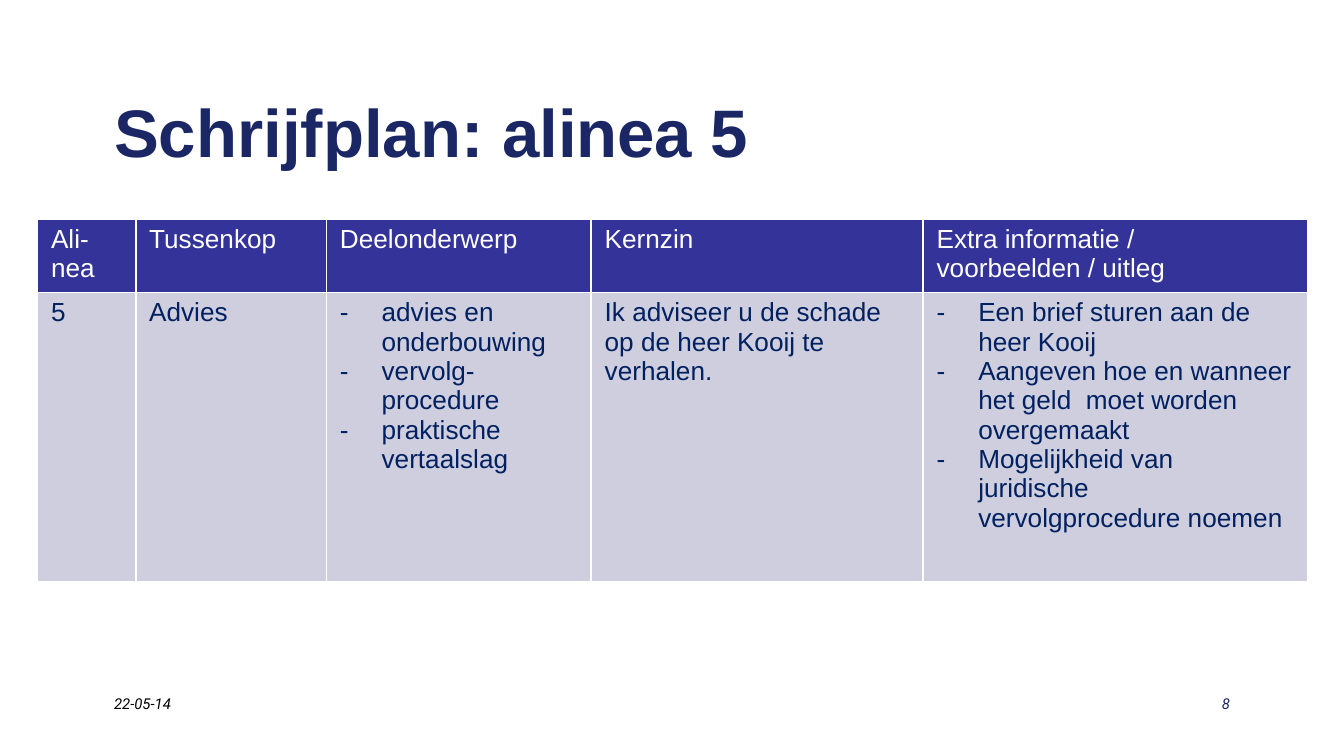
"""Build the writing-plan slide with its table for paragraph 5."""
from pptx import Presentation
from pptx.dml.color import RGBColor as Rgb
from pptx.enum.text import MSO_ANCHOR as Anchor, PP_ALIGN as Align
from pptx.oxml.ns import qn
from pptx.util import Inches, Pt
from lxml.etree import SubElement

COLORS = {
    "title": "1B2764",
    "date": "000000",
    "header": "333399",
    "body": "CECEDE",
    "cell_text": "002060",
    "white": "FFFFFF",
}
COLUMN_WIDTHS = [0.73, 1.42, 1.97, 2.47, 2.86]
ROW_HEIGHTS = [0.53, 2.15]
HEADINGS = ["Ali-nea", "Tussenkop", "Deelonderwerp", "Kernzin",
            "Extra informatie / voorbeelden / uitleg"]
PLAN = [
    "5",
    "Advies",
    ["advies en onderbouwing", "vervolg-procedure", "praktische vertaalslag"],
    "Ik adviseer u de schade op de heer Kooij te verhalen.",
    ["Een brief sturen aan de heer Kooij",
     "Aangeven hoe en wanneer het geld  moet worden overgemaakt",
     "Mogelijkheid van  juridische vervolgprocedure noemen"],
]


def write(para, text, size=14, font="Arial", color="cell_text", bold=False,
          italic=False, align=Align.LEFT, bullet=None):
    para.alignment = align
    if bullet:
        properties = para._p.get_or_add_pPr()
        properties.set("marL", str(Inches(0.31)))
        properties.set("indent", str(-Inches(0.31)))
        SubElement(properties, qn("a:buFont"), typeface=font)
        SubElement(properties, qn("a:buChar"), char=bullet)
    span = para.add_run()
    span.text = text
    span.font.size = Pt(size)
    span.font.name = font
    span.font.bold = bold
    span.font.italic = italic
    span.font.color.rgb = Rgb.from_string(COLORS[color])


class SlideWriter:
    """Hold the current slide and add its styled elements."""

    def __init__(self, deck):
        self.page = deck.slides.add_slide(deck.slide_layouts[5])

    def title(self, text, left, top, width, height):
        box = self.page.shapes.title
        box.left, box.top = Inches(left), Inches(top)
        box.width, box.height = Inches(width), Inches(height)
        box.text_frame.vertical_anchor = Anchor.MIDDLE
        write(box.text_frame.paragraphs[0], text, size=36, color="title", bold=True)

    def footer(self, text, left, color, align):
        box = self.page.shapes.add_textbox(
            Inches(left), Inches(5.12), Inches(2.08), Inches(0.38))
        box.text_frame.word_wrap = True
        write(box.text_frame.paragraphs[0], text, size=8, font="Roboto",
              color=color, italic=True, align=align)

    def border(self, cell):
        properties = cell._tc.get_or_add_tcPr()
        for side in "LRTB":
            line = SubElement(properties, qn(f"a:ln{side}"), w=str(Pt(1)))
            fill = SubElement(line, qn("a:solidFill"))
            SubElement(fill, qn("a:srgbClr"), val=COLORS["white"])

    def cell(self, cell, content, fill, color):
        cell.margin_left, cell.margin_right = Inches(0.1), Inches(0.09)
        cell.margin_top = cell.margin_bottom = Inches(0.04)
        self.border(cell)
        cell.fill.solid()
        cell.fill.fore_color.rgb = Rgb.from_string(COLORS[fill])
        bullet = "-" if isinstance(content, list) else None
        frame = cell.text_frame
        for index, text in enumerate(content if bullet else [content]):
            para = frame.add_paragraph() if index else frame.paragraphs[0]
            write(para, text, color=color, bullet=bullet)

    def table(self, left, top):
        table = self.page.shapes.add_table(
            len(ROW_HEIGHTS), len(COLUMN_WIDTHS), Inches(left), Inches(top),
            Inches(sum(COLUMN_WIDTHS)), Inches(sum(ROW_HEIGHTS))).table
        for column, width in zip(table.columns, COLUMN_WIDTHS):
            column.width = Inches(width)
        for row, height in zip(table.rows, ROW_HEIGHTS):
            row.height = Inches(height)
        for index, (heading, content) in enumerate(zip(HEADINGS, PLAN)):
            self.cell(table.cell(0, index), heading, "header", "white")
            self.cell(table.cell(1, index), content, "body", "cell_text")


def main():
    deck = Presentation()
    deck.slide_width, deck.slide_height = Inches(10), Inches(10 * 9 / 16)
    writer = SlideWriter(deck)
    writer.title("Schrijfplan: alinea 5", 0.75, 0.5, 8.5, 0.94)
    writer.footer("22-05-14", 0.75, "date", Align.LEFT)
    writer.footer("8", 7.17, "title", Align.RIGHT)
    writer.table(0.28, 1.63)
    deck.save("out.pptx")


if __name__ == "__main__":
    main()
